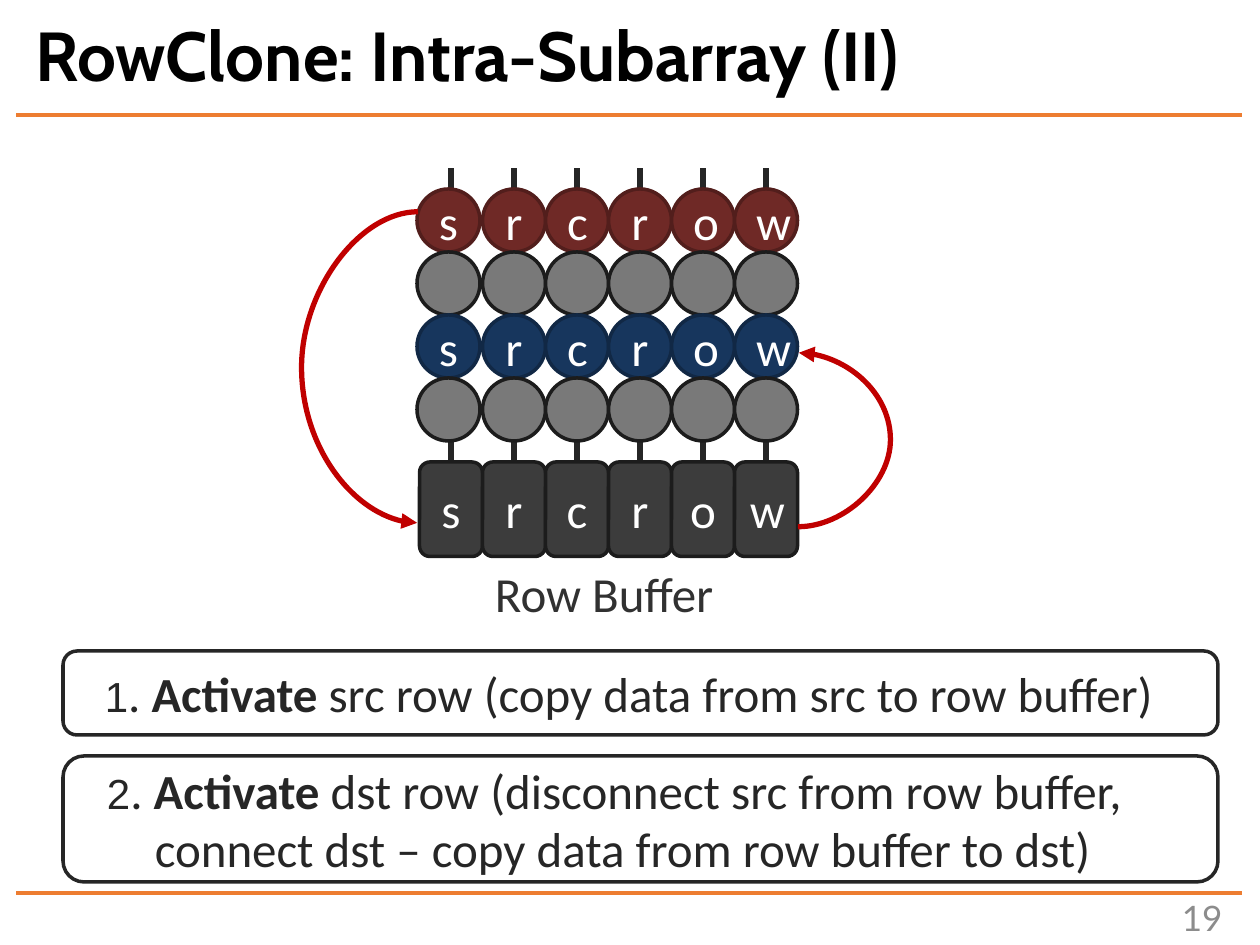
from dataclasses import dataclass
from typing import NamedTuple

from lxml.etree import SubElement
from pptx import Presentation
from pptx.dml.color import RGBColor
from pptx.enum.shapes import MSO_CONNECTOR, MSO_SHAPE
from pptx.enum.text import MSO_ANCHOR, MSO_AUTO_SIZE, PP_ALIGN
from pptx.oxml.ns import qn
from pptx.util import Pt


@dataclass(frozen=True)
class Theme:
    rule: str = "ED7D31"
    ink: str = "262626"
    caption: str = "313131"
    page_number: str = "8C8C8C"
    title: str = "000000"
    white: str = "FFFFFF"
    arrow: str = "C00000"
    body_font: str = "Calibri"
    number_font: str = "Arial"
    page_font: str = "Lato"
    title_font: str = "Cabin"
    title_size: float = 39.6
    body_size: float = 28
    number_size: float = 24
    page_size: float = 20


class Paint(NamedTuple):
    fill: str
    line: str


class Box(NamedTuple):
    left: float
    top: float
    width: float
    height: float

    def lengths(self) -> list:
        return [Pt(value) for value in self]


class CellRow(NamedTuple):
    top: float
    paint: Paint
    word: str


class Step(NamedTuple):
    number: str
    detail: str
    box: Box
    hanging: float


class CopyArrow(NamedTuple):
    start: tuple
    end: tuple
    reach: float


THEME = Theme()
SOURCE = Paint("6F2926", "521E1C")
IDLE = Paint("797979", "1C1C1C")
TARGET = Paint("17365D", "112845")
BUFFER = Paint("3C3C3C", "1C1C1C")
OUTLINED = Paint(THEME.white, THEME.ink)

WORD = "srcrow"
BLANK = " " * len(WORD)
CELL = 36
GRID_LEFT = 239.76
FIRST_CIRCLE_SHIFT = -1.44
BUFFER_TOP = 264
BUFFER_HEIGHT = 54

ROWS = [
    CellRow(108, SOURCE, WORD),
    CellRow(144, IDLE, BLANK),
    CellRow(180, TARGET, WORD),
    CellRow(216, IDLE, BLANK),
]
ARROWS = [
    CopyArrow((238.9, 121), (238.4, 298.8), 65.2),
    CopyArrow((456, 301), (456.5, 201.6), 51.8),
]
STEPS = [
    Step("1", "src row (copy data from src to row buffer)",
         Box(36, 372, 660, 48), 0),
    Step("2", "dst row (disconnect src from row buffer, "
         "connect dst – copy data from row buffer to dst)",
         Box(36, 432, 660, 72), 27.36),
]


def add_span(para, text: str, color: str, size: float = THEME.body_size,
             face: str = THEME.body_font, bold: bool = False) -> None:
    span = para.add_run()
    span.text = text
    span.font.name = face
    span.font.size = Pt(size)
    span.font.bold = bold
    span.font.color.rgb = RGBColor.from_string(color)


def add_panel(page, kind, box: Box, paint: Paint):
    panel = page.shapes.add_shape(kind, *box.lengths())
    panel.shadow.inherit = False
    panel.fill.solid()
    panel.fill.fore_color.rgb = RGBColor.from_string(paint.fill)
    panel.line.color.rgb = RGBColor.from_string(paint.line)
    panel.line.width = Pt(2)
    return panel


def add_line(page, start: tuple, end: tuple, color: str, width: float,
             kind=MSO_CONNECTOR.STRAIGHT):
    points = [Pt(value) for value in (*start, *end)]
    line = page.shapes.add_connector(kind, *points)
    line.line.color.rgb = RGBColor.from_string(color)
    line.line.width = Pt(width)
    SubElement(line._element.spPr, qn("a:effectLst"))
    return line


def add_copy_arrow(page, arrow: CopyArrow) -> None:
    curve = add_line(page, arrow.start, arrow.end, THEME.arrow, 3,
                     MSO_CONNECTOR.CURVE)
    properties = curve._element.spPr
    SubElement(properties.find(qn("a:ln")), qn("a:tailEnd"), type="triangle")
    bend = round(arrow.reach / abs(arrow.end[0] - arrow.start[0]) * 100000)
    guides = properties.find(qn("a:prstGeom")).find(qn("a:avLst"))
    SubElement(guides, qn("a:gd"), name="adj1", fmla=f"val {bend}")


def add_cell(page, kind, box: Box, paint: Paint, letter: str) -> None:
    cell = add_panel(page, kind, box, paint)
    if letter.strip():
        para = cell.text_frame.paragraphs[0]
        para.alignment = PP_ALIGN.CENTER
        add_span(para, letter, THEME.white)


def add_subarray(page) -> None:
    lefts = [GRID_LEFT + CELL * column for column in range(len(WORD))]
    for left in lefts:
        center = left + CELL / 2
        add_line(page, (center, BUFFER_TOP), (center, 96), THEME.ink, 3)
    for row in ROWS:
        for column, letter in enumerate(row.word):
            left = lefts[column] + (0 if column else FIRST_CIRCLE_SHIFT)
            add_cell(page, MSO_SHAPE.OVAL, Box(left, row.top, CELL, CELL),
                     row.paint, letter)
    for left, letter in zip(lefts, WORD):
        add_cell(page, MSO_SHAPE.ROUNDED_RECTANGLE,
                 Box(left, BUFFER_TOP, CELL, BUFFER_HEIGHT), BUFFER, letter)


def add_step(page, step: Step) -> None:
    panel = add_panel(page, MSO_SHAPE.ROUNDED_RECTANGLE, step.box, OUTLINED)
    frame = panel.text_frame
    frame.word_wrap = True
    frame.margin_left = Pt(21.6)
    para = frame.paragraphs[0]
    para.alignment = PP_ALIGN.LEFT
    if step.hanging:
        properties = para._p.get_or_add_pPr()
        properties.set("marL", str(Pt(step.hanging)))
        properties.set("indent", str(-Pt(step.hanging)))
    add_span(para, step.number, THEME.ink, THEME.number_size, THEME.number_font)
    add_span(para, ". ", THEME.ink)
    add_span(para, "Activate ", THEME.ink, bold=True)
    add_span(para, step.detail, THEME.ink)


def add_title(page) -> None:
    title = page.shapes.title
    title.left, title.top, title.width, title.height = Box(
        12.96, 10.08, 700.56, 47.52).lengths()
    frame = title.text_frame
    frame.auto_size = MSO_AUTO_SIZE.NONE
    frame.vertical_anchor = MSO_ANCHOR.MIDDLE
    para = frame.paragraphs[0]
    para.alignment = PP_ALIGN.LEFT
    para.line_spacing = 0.9
    add_span(para, "RowClone: Intra-Subarray (II)", THEME.title,
             THEME.title_size, THEME.title_font, True)


def add_labels(page) -> None:
    caption = page.shapes.add_textbox(*Box(275.76, 318.24, 144.72, 41.04).lengths())
    caption.text_frame.word_wrap = False
    caption.text_frame.auto_size = MSO_AUTO_SIZE.SHAPE_TO_FIT_TEXT
    add_span(caption.text_frame.paragraphs[0], "Row Buffer", THEME.caption)
    number = page.shapes.add_textbox(*Box(627.84, 509.76, 77.76, 28.8).lengths())
    number.text_frame.word_wrap = True
    number.text_frame.vertical_anchor = MSO_ANCHOR.MIDDLE
    para = number.text_frame.paragraphs[0]
    para.alignment = PP_ALIGN.RIGHT
    add_span(para, "19", THEME.page_number, THEME.page_size, THEME.page_font)


def main() -> None:
    deck = Presentation()
    deck.slide_width, deck.slide_height = Pt(720), Pt(540)
    page = deck.slides.add_slide(deck.slide_layouts[5])
    add_title(page)
    for top in (65.8, 510.4):
        add_line(page, (9.36, top), (709.92, top), THEME.rule, 2.25)
    add_subarray(page)
    for arrow in ARROWS:
        add_copy_arrow(page, arrow)
    add_labels(page)
    for step in STEPS:
        add_step(page, step)
    deck.save("out.pptx")


if __name__ == "__main__":
    main()
